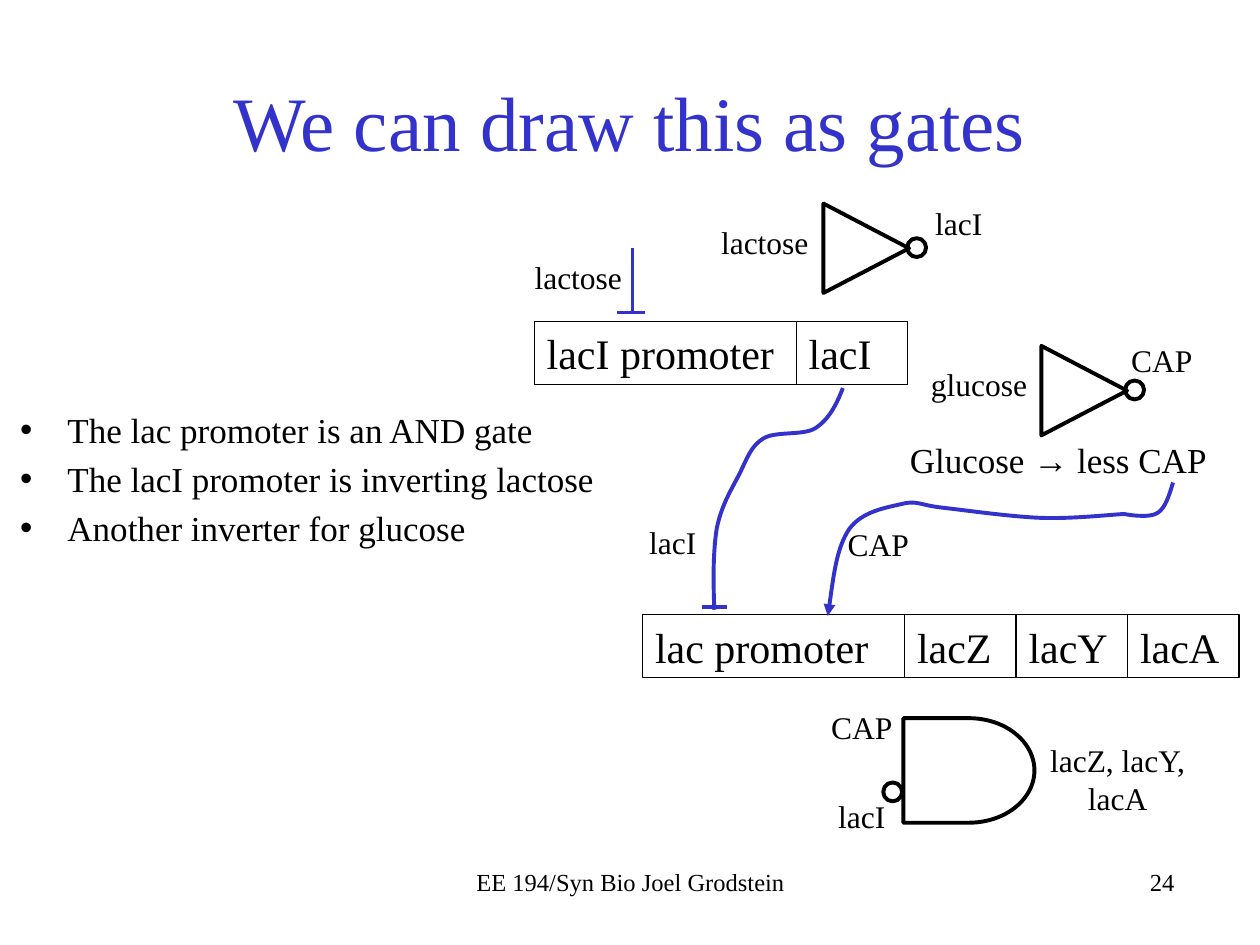
from lxml.etree import SubElement
from pptx import Presentation
from pptx.dml.color import RGBColor
from pptx.enum.shapes import MSO_CONNECTOR, MSO_SHAPE
from pptx.enum.text import MSO_ANCHOR, PP_ALIGN
from pptx.oxml.ns import qn
from pptx.util import Inches, Pt

FONT, BLACK, BLUE = "Times New Roman", "000000", "3333CC"
PROMOTER_WIDTH, GENE_WIDTH, GENE_HEIGHT = 2.08, 0.885, 0.5
BUBBLE = 0.15


def outline(shape, color, width):
    """Give a shape or connector a plain line, no fill and no shadow."""
    if hasattr(shape, "fill"):
        shape.fill.background()
    shape.line.color.rgb = RGBColor.from_string(color)
    shape.line.width = Pt(width)
    SubElement(shape._element.spPr, qn("a:effectLst"))


def write(shape, lines, size, align=PP_ALIGN.CENTER, color=BLACK, gap=None):
    frame = shape.text_frame
    frame.word_wrap = True
    frame.text = "\n".join(lines)
    for paragraph in frame.paragraphs:
        paragraph.alignment = align
        paragraph.font.name = FONT
        paragraph.font.size = Pt(size)
        paragraph.font.color.rgb = RGBColor.from_string(color)
    if gap:
        frame.paragraphs[-1].space_before = Pt(gap)


presentation = Presentation()
presentation.slide_width, presentation.slide_height = Inches(10), Inches(7.5)
slide = presentation.slides.add_slide(presentation.slide_layouts[1])
shapes = slide.shapes

# Title and list
title, body = slide.placeholders
for placeholder, box in ((title, (0.75, 0.33, 8.5, 1.25)), (body, (0.06, 3.19, 5.27, 1.51))):
    placeholder.left, placeholder.top, placeholder.width, placeholder.height = map(Inches, box)
write(title, ["We can draw this as gates"], 44, color=BLUE)
write(body, [
    "The lac promoter is an AND gate",
    "The lacI promoter is inverting lactose",
    "Another inverter for glucose",
], 20, PP_ALIGN.LEFT)

# Operons: a promoter followed by its genes
for left, top, names in (
    (4.24, 2.55, ["lacI promoter", "lacI"]),
    (5.1, 4.88, ["lac promoter", "lacZ", "lacY", "lacA"]),
):
    for index, name in enumerate(names):
        width = GENE_WIDTH if index else PROMOTER_WIDTH
        gene = shapes.add_shape(MSO_SHAPE.RECTANGLE, Inches(left), Inches(top),
                                Inches(width), Inches(GENE_HEIGHT))
        outline(gene, BLACK, 0.75)
        write(gene, [name], 24, PP_ALIGN.LEFT)
        gene.text_frame.vertical_anchor = MSO_ANCHOR.TOP
        left += width

# Gates: two inverters and an AND with one inverted input
gates = [(MSO_SHAPE.FLOWCHART_DELAY, 7.17, 5.7, 1.04, 0.83, 0),
         (MSO_SHAPE.OVAL, 7.01, 6.21, BUBBLE, BUBBLE, 0)]
for left, top in ((6.52, 1.63), (8.25, 2.76)):
    gates += [(MSO_SHAPE.FLOWCHART_MERGE, left, top, 0.71, 0.68, 270),
              (MSO_SHAPE.OVAL, left + 0.68, top + 0.26, BUBBLE, BUBBLE, 0)]
for kind, left, top, width, height, rotation in gates:
    gate = shapes.add_shape(kind, Inches(left), Inches(top), Inches(width), Inches(height))
    gate.rotation = rotation
    outline(gate, BLACK, 2.25)

# Labels
for text, size, left, top, width, height in (
    ("Glucose → less CAP", 20, 6.98, 3.43, 2.84, 0.44),
    ("lacZ, lacY, lacA", 18, 8.2, 5.83, 1.34, 0.71),
    ("lactose", 18, 5.59, 1.72, 0.96, 0.4),
    ("lacI", 18, 7.13, 1.57, 0.96, 0.4),
    ("glucose", 18, 7.26, 2.85, 1.02, 0.4),
    ("CAP", 18, 8.74, 2.66, 0.96, 0.4),
    ("lacI", 18, 4.98, 4.1, 0.72, 0.4),
    ("CAP", 18, 6.54, 4.12, 0.86, 0.4),
    ("lactose", 18, 4.02, 2, 1.14, 0.4),
    ("EE 194/Syn Bio Joel Grodstein", 14, 3.42, 6.83, 3.17, 0.5),
):
    label = shapes.add_textbox(Inches(left), Inches(top), Inches(width), Inches(height))
    write(label, [text], size)

and_inputs = shapes.add_textbox(Inches(6.49), Inches(5.57), Inches(0.7), Inches(1.09))
write(and_inputs, ["CAP", "lacI"], 18, gap=29)
slide_number = shapes.add_textbox(Inches(6.25), Inches(6.83), Inches(3.17), Inches(0.5))
write(slide_number, ["24"], 14, PP_ALIGN.RIGHT)

# Regulation curves: a start point, then three Bézier points per segment
repression = [
    (6.69, 3.08), (6.64, 3.21), (6.58, 3.33), (6.47, 3.4), (6.37, 3.46), (6.16, 3.42),
    (6.06, 3.48), (5.96, 3.54), (5.93, 3.64), (5.87, 3.76), (5.81, 3.88), (5.73, 4),
    (5.69, 4.19), (5.66, 4.37), (5.66, 4.6), (5.67, 4.84),
]
activation = [
    (9.31, 3.83), (9.28, 3.93), (9.25, 4.03), (9.19, 4.07), (9.12, 4.12), (8.92, 4.08),
    (8.92, 4.08), (8.76, 4.09), (8.49, 4.12), (8.25, 4.11), (8.01, 4.1), (7.66, 4.05),
    (7.48, 4.03), (7.3, 4.01), (7.28, 3.97), (7.16, 4), (7.03, 4.03), (6.84, 4.06),
    (6.74, 4.2), (6.64, 4.35), (6.61, 4.62), (6.57, 4.89),
]
for points, has_arrow in ((repression, False), (activation, True)):
    start, *rest = [(Inches(x), Inches(y)) for x, y in points]
    builder = shapes.build_freeform(*start)
    builder.add_line_segments(rest, close=False)
    curve = builder.convert_to_shape()
    outline(curve, BLUE, 2.25)
    outline_path = curve._element.find(".//" + qn("a:path"))
    segments = outline_path.findall(qn("a:lnTo"))
    for index, segment in enumerate(segments):
        if index % 3 == 0:
            bezier = SubElement(outline_path, qn("a:cubicBezTo"))
        bezier.append(segment[0])
        outline_path.remove(segment)
    if has_arrow:
        SubElement(curve._element.spPr.find(qn("a:ln")), qn("a:tailEnd"), type="triangle")

# Repression bars and the lactose stem
for x1, y1, x2, y2 in (
    (5.57, 4.82, 5.77, 4.82),
    (5.02, 1.97, 5.02, 2.48),
    (4.9, 2.48, 5.12, 2.48),
):
    bar = shapes.add_connector(MSO_CONNECTOR.STRAIGHT, Inches(x1), Inches(y1),
                               Inches(x2), Inches(y2))
    outline(bar, BLUE, 2.25)

presentation.save("out.pptx")
